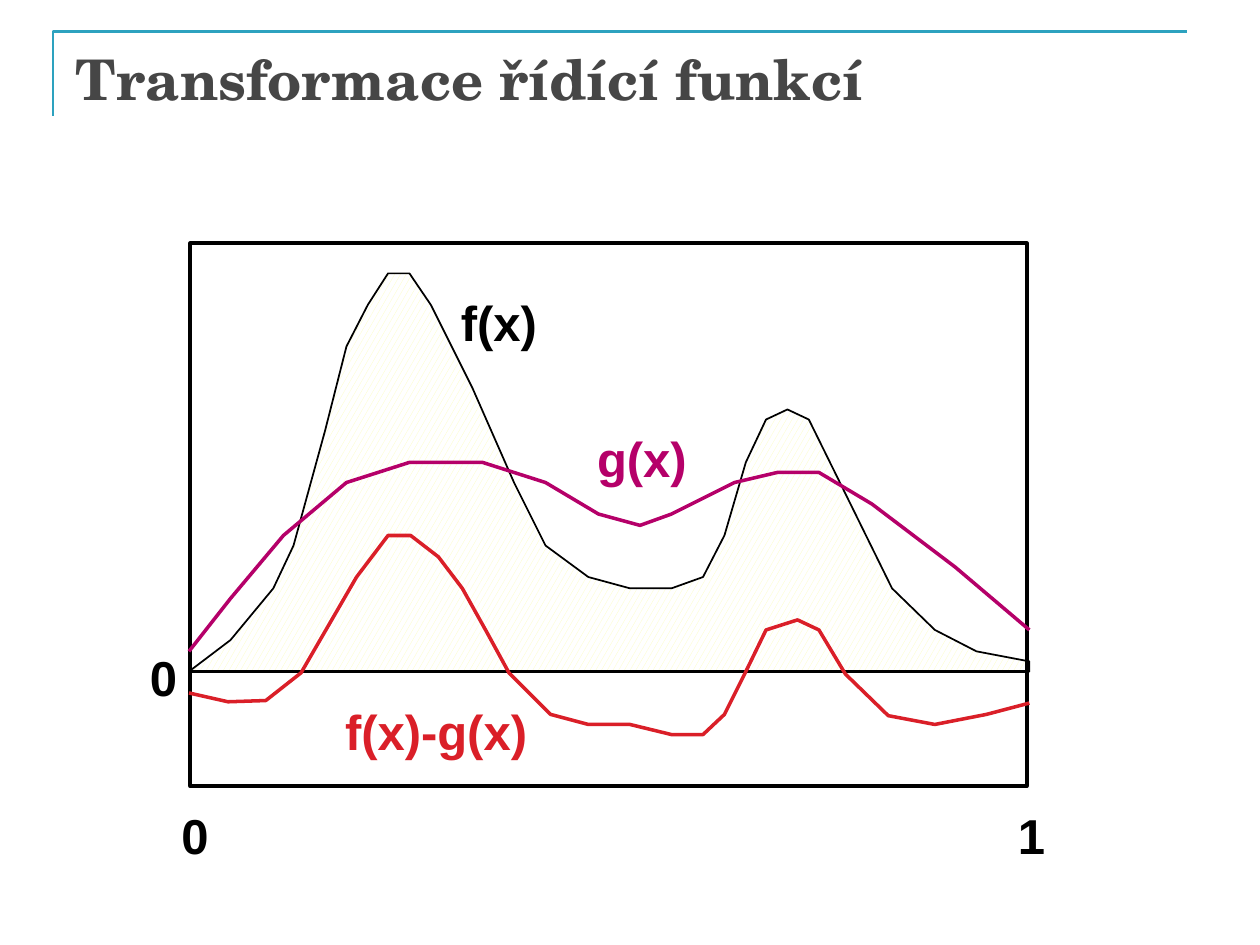
from lxml import etree
from pptx import Presentation
from pptx.dml.color import RGBColor
from pptx.enum import dml, shapes, text
from pptx.oxml import ns
from pptx.util import Inches, Pt

TEAL = RGBColor(0x2D, 0xA2, 0xBF)
GRAY = RGBColor(0x46, 0x46, 0x46)
BLACK = RGBColor(0, 0, 0)
WHITE = RGBColor(0xFF, 0xFF, 0xFF)
CREAM = RGBColor(0xFC, 0xFE, 0xB9)
PURPLE = RGBColor(0xB5, 0x00, 0x69)
RED = RGBColor(0xDA, 0x1F, 0x28)

BASELINE = 3.4
F_POINTS = [
    (33, 25), (67, 66), (83, 100), (108, 191), (125, 258), (142, 291), (158, 316),
    (175, 316), (192, 291), (225, 225), (258, 150), (283, 100), (317, 75), (350, 66),
    (383, 66), (408, 75), (425, 108), (442, 166), (458, 200), (475, 208), (492, 200),
    (525, 133), (558, 66), (592, 33), (625, 16), (667, 8), (667, 0), (0, 0),
]
G_POINTS = [
    (0, 16), (33, 58), (75, 108), (125, 150), (175, 166), (233, 166), (283, 150),
    (325, 125), (358, 116), (383, 125), (433, 150), (467, 158), (500, 158),
    (542, 133), (608, 83), (667, 33),
]
DIFFERENCE_POINTS = [
    (0, -17), (31, -24), (61, -23), (89, -1), (133, 75), (158, 108), (176, 108),
    (198, 91), (217, 66), (236, 32), (254, -1), (287, -34), (317, -42), (350, -42),
    (383, -50), (408, -50), (425, -34), (442, 0), (458, 33), (483, 41), (500, 33),
    (521, -2), (555, -35), (592, -42), (633, -34), (667, -25),
]
LABELS = [
    ("f(x)", 2.06, 0.34, 0.83, BLACK),
    ("0", -0.16, 4.41, 0.42, BLACK),
    ("1", 6.48, 4.41, 0.42, BLACK),
    ("0", -0.41, 3.16, 0.42, BLACK),
    ("g(x)", 3.14, 1.42, 0.93, PURPLE),
    ("f(x)-g(x)", 1.14, 3.59, 1.67, RED),
]


def add_outline(page, left, top, points, color, width, close=False):
    """Draw an unfilled outline through points in hundredths of an inch, y upwards."""
    flipped = [(x, -y) for x, y in points]
    builder = page.shapes.build_freeform(*flipped[0], scale=Inches(0.01))
    builder.add_line_segments(flipped[1:], close=close)
    outline = builder.convert_to_shape(Inches(left), Inches(top))
    outline.shadow.inherit = False
    outline.fill.background()
    outline.line.color.rgb = color
    outline.line.width = Pt(width)
    return outline


def add_text(page, content, left, top, width, height, font_name, size, color, wrap):
    """Place one bold line of text."""
    box = page.shapes.add_textbox(Inches(left), Inches(top), Inches(width), Inches(height))
    frame = box.text_frame
    frame.word_wrap = wrap
    if not wrap:
        frame.auto_size = text.MSO_AUTO_SIZE.SHAPE_TO_FIT_TEXT
    paragraph = frame.paragraphs[0]
    paragraph.text = content
    font = paragraph.font
    font.name, font.size, font.bold = font_name, Pt(size), True
    font.color.rgb = color


def add_title(page, left, top, width, height):
    """Draw the heading with its corner rule."""
    corner = [(0, -67), (0, 0), (900, 0)]
    add_outline(page, left, top, corner, TEAL, 1.5)
    add_text(page, "Transformace řídící funkcí", left + 0.08, top + 0.05, width, height,
             "TeX Gyre Schola", 32, GRAY, True)


def add_plot(page, left, top, width, height):
    """Draw the framed plot of f, g and their difference."""
    base = top + BASELINE
    area = add_outline(page, left, base, F_POINTS, BLACK, 1, close=True)
    area.fill.patterned()
    area.fill.pattern = dml.MSO_PATTERN.LARGE_CONFETTI
    area.fill.fore_color.rgb = CREAM
    area.fill.back_color.rgb = WHITE

    frame = page.shapes.add_shape(
        shapes.MSO_SHAPE.RECTANGLE, Inches(left + 0.01), Inches(top),
        Inches(width - 0.03), Inches(height))
    frame.shadow.inherit = False
    frame.fill.background()
    frame.line.color.rgb = BLACK
    frame.line.width = Pt(2)

    axis = page.shapes.add_connector(
        shapes.MSO_CONNECTOR.STRAIGHT, Inches(left + 0.02), Inches(base),
        Inches(left + width - 0.02), Inches(base))
    axis.line.color.rgb = BLACK
    axis.line.width = Pt(2)
    etree.SubElement(axis.element.spPr, ns.qn("a:effectLst"))

    add_outline(page, left, base, G_POINTS, PURPLE, 2)
    add_outline(page, left, base, DIFFERENCE_POINTS, RED, 2)
    for content, x, y, label_width, color in LABELS:
        add_text(page, content, left + x, top + y, label_width, 0.56,
                 "Arial", 28, color, False)


def main():
    """Build the deck and save it."""
    deck = Presentation()
    deck.slide_width, deck.slide_height = Inches(10), Inches(7.5)
    page = deck.slides.add_slide(deck.slide_layouts[6])
    add_title(page, 0.42, 0.25, 9, 1.25)
    add_plot(page, 1.5, 1.93, 6.67, 4.31)
    deck.save("out.pptx")


if __name__ == "__main__":
    main()
